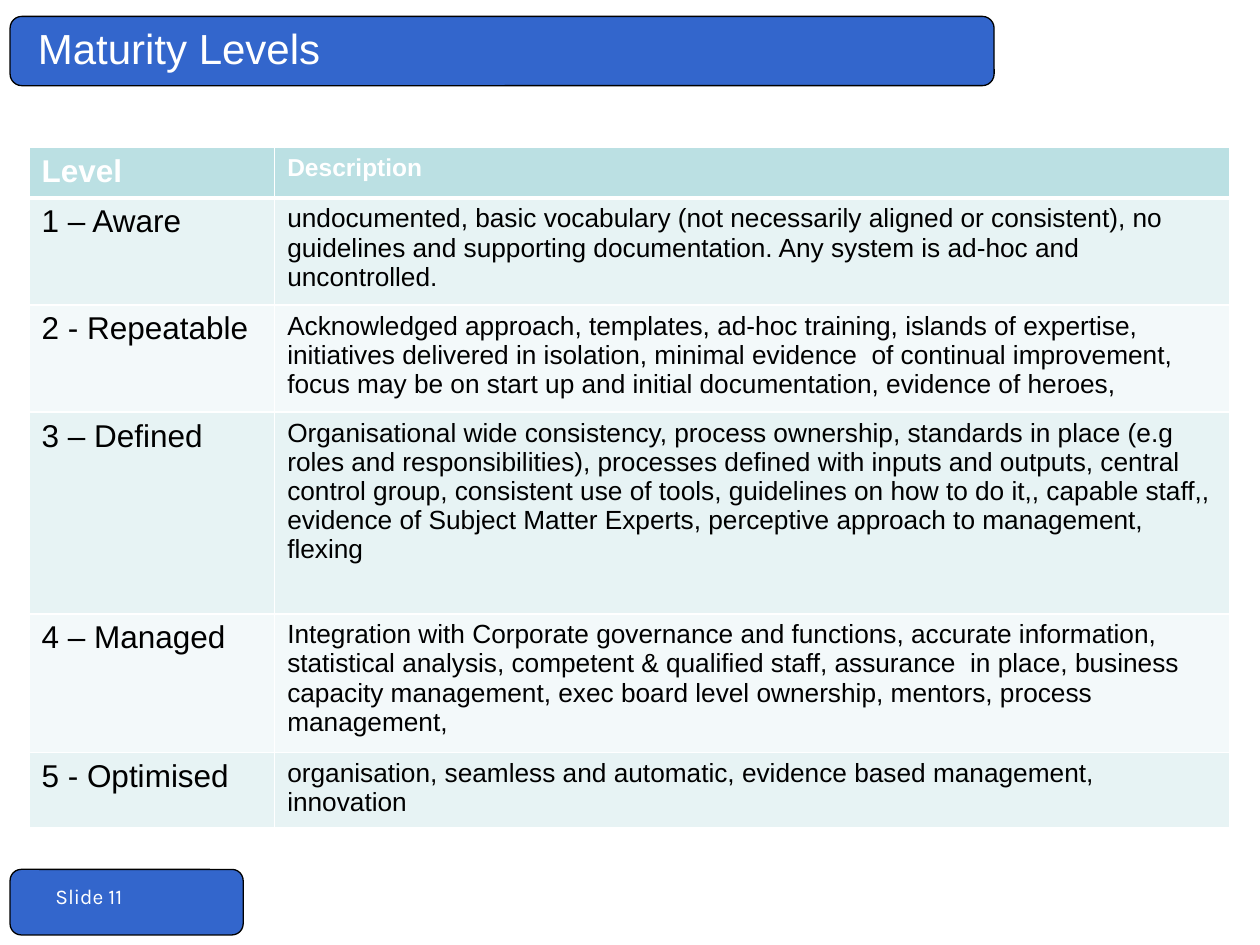
import dataclasses

import pptx
import pptx.dml.color
import pptx.enum.shapes
import pptx.enum.text
import pptx.oxml
import pptx.oxml.ns
import pptx.util
from pptx.util import Inches


@dataclasses.dataclass(frozen=True)
class Theme:
    """Colours, fonts and type sizes of the slide."""

    bar: str = "3366CC"
    outline: str = "000000"
    light: str = "FFFFFF"
    dark: str = "000000"
    header: str = "BBE0E3"
    bands: tuple = ("E7F3F4", "F3F9FA")
    font: str = "Arial"
    footer_font: str = "Karla"
    title_size: int = 24
    level_size: int = 18
    heading_size: int = 14
    description_size: int = 15
    footer_size: int = 12


THEME = Theme()
COLUMN_WIDTHS = (1.95, 7.58)
ROW_HEIGHTS = (0.39, 0.85, 0.85, 1.6, 1.1, 0.6)
LEVELS = (
    ("1 – Aware",
     "undocumented, basic vocabulary (not necessarily aligned or consistent), no "
     "guidelines and supporting documentation. Any system is ad-hoc and uncontrolled."),
    ("2 - Repeatable",
     "Acknowledged approach, templates, ad-hoc training, islands of expertise, "
     "initiatives delivered in isolation, minimal evidence  of continual improvement, "
     "focus may be on start up and initial documentation, evidence of heroes,"),
    ("3 – Defined",
     "Organisational wide consistency, process ownership, standards in place (e.g "
     "roles and responsibilities), processes defined with inputs and outputs, central "
     "control group, consistent use of tools, guidelines on how to do it,, capable "
     "staff,, evidence of Subject Matter Experts, perceptive approach to management, "
     "flexing"),
    ("4 – Managed",
     "Integration with Corporate governance and functions, accurate information, "
     "statistical analysis, competent & qualified staff, assurance  in place, business "
     "capacity management, exec board level ownership, mentors, process management,"),
    ("5 - Optimised",
     "organisation, seamless and automatic, evidence based management, innovation"),
)


def rgb(value):
    """Return a colour from its hexadecimal text."""
    return pptx.dml.color.RGBColor.from_string(value)


def add_run(paragraph, text, size, color, font=THEME.font, bold=False):
    """Add one formatted run to a paragraph."""
    run = paragraph.add_run()
    run.text = text
    run.font.name = font
    run.font.size = pptx.util.Pt(size)
    run.font.bold = bold
    run.font.color.rgb = rgb(color)


def add_bar(slide, left, top, width, height):
    """Add a rounded blue bar with a thin outline."""
    shape = slide.shapes.add_shape(
        pptx.enum.shapes.MSO_SHAPE.ROUNDED_RECTANGLE,
        Inches(left), Inches(top), Inches(width), Inches(height))
    shape.adjustments[0] = 0.17
    shape.shadow.inherit = False
    shape.fill.solid()
    shape.fill.fore_color.rgb = rgb(THEME.bar)
    shape.line.color.rgb = rgb(THEME.outline)
    shape.line.width = pptx.util.Pt(0.75)


def format_title(slide, text):
    """Place the title placeholder over the top bar and move it to the front."""
    title = slide.shapes.title
    title.left, title.top = Inches(0.2), Inches(0)
    title.width, title.height = Inches(7.62), Inches(0.76)
    title.text_frame.vertical_anchor = pptx.enum.text.MSO_ANCHOR.MIDDLE
    paragraph = title.text_frame.paragraphs[0]
    paragraph.alignment = pptx.enum.text.PP_ALIGN.LEFT
    add_run(paragraph, text, THEME.title_size, THEME.light)
    slide.shapes._spTree.append(title._element)


def add_slide_label(slide, text):
    """Add the slide number label on the lower bar."""
    shape = slide.shapes.add_textbox(Inches(0), Inches(6.9), Inches(1.38), Inches(0.42))
    frame = shape.text_frame
    frame.word_wrap = True
    frame.margin_left = Inches(0.44)
    frame.vertical_anchor = pptx.enum.text.MSO_ANCHOR.MIDDLE
    add_run(frame.paragraphs[0], text, THEME.footer_size, THEME.light, THEME.footer_font)


def set_borders(cell, top, bottom):
    """Draw white cell borders with the given top and bottom widths in points."""
    properties = cell._tc.get_or_add_tcPr()
    for side, width in (("L", 1), ("R", 1), ("T", top), ("B", bottom)):
        properties.append(pptx.oxml.parse_xml(
            f'<a:ln{side} {pptx.oxml.ns.nsdecls("a")} w="{pptx.util.Pt(width)}">'
            f'<a:solidFill><a:srgbClr val="{THEME.light}"/></a:solidFill></a:ln{side}>'))


def fill_cell(cell, text, row, size):
    """Write and colour one cell according to its row."""
    header = row == 0
    set_borders(cell, 3 if row == 1 else 1, 3 if header else 1)
    cell.fill.solid()
    cell.fill.fore_color.rgb = rgb(THEME.header if header else THEME.bands[(row - 1) % 2])
    color = THEME.light if header else THEME.dark
    add_run(cell.text_frame.paragraphs[0], text, size, color, bold=header)


def add_levels_table(slide):
    """Add the table of maturity levels."""
    rows = (("Level", "Description"),) + LEVELS
    table = slide.shapes.add_table(
        len(rows), len(COLUMN_WIDTHS), Inches(0.23), Inches(1.17),
        Inches(sum(COLUMN_WIDTHS)), Inches(sum(ROW_HEIGHTS))).table
    for column, width in zip(table.columns, COLUMN_WIDTHS):
        column.width = Inches(width)
    for index, (height, (level, description)) in enumerate(zip(ROW_HEIGHTS, rows)):
        table.rows[index].height = Inches(height)
        size = THEME.description_size if index else THEME.heading_size
        fill_cell(table.cell(index, 0), level, index, THEME.level_size)
        fill_cell(table.cell(index, 1), description, index, size)


def main():
    """Build and save the slide."""
    presentation = pptx.Presentation()
    presentation.slide_width, presentation.slide_height = Inches(10), Inches(7.5)
    slide = presentation.slides.add_slide(presentation.slide_layouts[5])
    add_bar(slide, 0.08, 0.13, 7.81, 0.55)
    add_bar(slide, 0.08, 6.9, 1.85, 0.52)
    add_slide_label(slide, "Slide 11")
    add_levels_table(slide)
    format_title(slide, "Maturity Levels")
    presentation.save("out.pptx")


if __name__ == "__main__":
    main()
